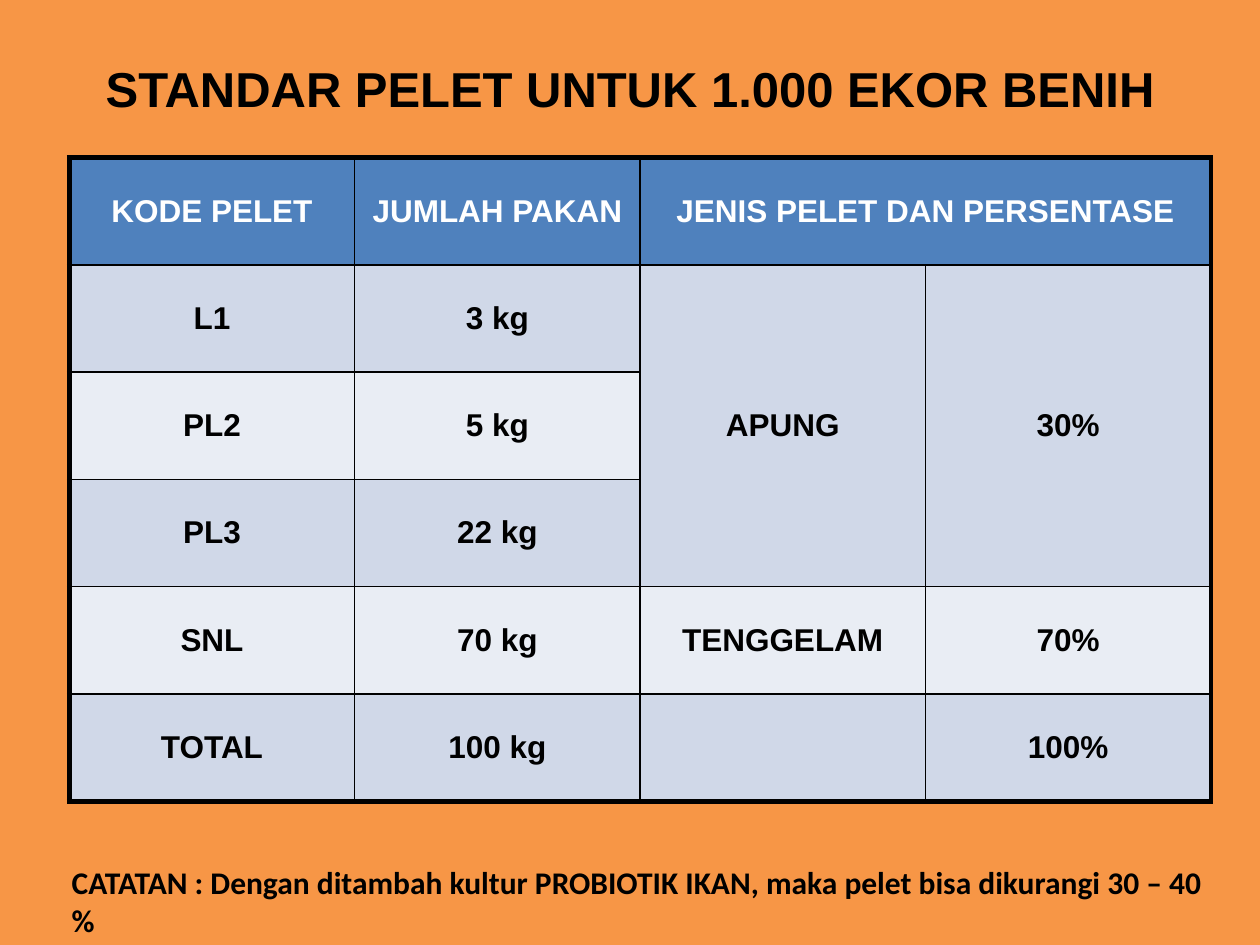
from lxml.etree import SubElement
from pptx import Presentation
from pptx.dml.color import RGBColor
from pptx.enum.text import MSO_ANCHOR, MSO_AUTO_SIZE, PP_ALIGN
from pptx.oxml.ns import qn
from pptx.util import Inches, Pt

TITLE = "STANDAR PELET UNTUK 1.000 EKOR BENIH"
NOTE = "CATATAN : Dengan ditambah kultur PROBIOTIK IKAN, maka pelet bisa dikurangi 30 – 40 %"
ROWS = [
    ["KODE PELET", "JUMLAH PAKAN", "JENIS PELET DAN PERSENTASE", ""],
    ["L1", "3 kg", "APUNG", "30%"],
    ["PL2", "5 kg", "", ""],
    ["PL3", "22 kg", "", ""],
    ["SNL", "70 kg", "TENGGELAM", "70%"],
    ["TOTAL", "100 kg", "", "100%"],
]
MERGES = [((0, 2), (0, 3)), ((1, 2), (3, 2)), ((1, 3), (3, 3))]
COLORS = {
    "background": "F79646",
    "header": "4F81BD",
    "odd": "D0D8E8",
    "even": "E9EDF4",
    "ink": "000000",
    "white": "FFFFFF",
}
OUTER, INNER = 3, 1


def rgb(name):
    return RGBColor.from_string(COLORS[name])


def write(tf, text, size, font, color, align):
    p = tf.paragraphs[0]
    p.text = text
    p.alignment = align
    p.font.size = Pt(size)
    p.font.name = font
    p.font.bold = True
    p.font.color.rgb = rgb(color)


def set_borders(cell, widths):
    tc_pr = cell._tc.get_or_add_tcPr()
    for side, width in widths.items():
        ln = SubElement(tc_pr, qn(f"a:ln{side}"), w=str(Pt(width)))
        fill = SubElement(ln, qn("a:solidFill"))
        SubElement(fill, qn("a:srgbClr"), val=COLORS["ink"])


def add_feed_table(s):
    n_rows, n_cols = len(ROWS), len(ROWS[0])
    frame = s.shapes.add_table(
        n_rows, n_cols, Inches(0.55), Inches(1.25), Inches(9.06), Inches(5.11))
    table = frame.table
    for first, last in MERGES:
        table.cell(*first).merge(table.cell(*last))
    for r, row in enumerate(ROWS):
        band = "header" if r == 0 else "odd" if r % 2 else "even"
        for c, text in enumerate(row):
            cell = table.cell(r, c)
            right, bottom = c + cell.span_width, r + cell.span_height
            set_borders(cell, {
                "L": OUTER if c == 0 else INNER,
                "R": OUTER if right == n_cols else INNER,
                "T": OUTER if r == 0 else INNER,
                "B": OUTER if bottom == n_rows else INNER,
            })
            cell.fill.solid()
            cell.fill.fore_color.rgb = rgb(band)
            cell.vertical_anchor = MSO_ANCHOR.MIDDLE
            write(cell.text_frame, text, 18, "Arial",
                  "ink" if r else "white", PP_ALIGN.CENTER)


def main():
    prs = Presentation()
    prs.slide_width, prs.slide_height = Inches(10), Inches(7.5)
    s = prs.slides.add_slide(prs.slide_layouts[5])
    s.background.fill.solid()
    s.background.fill.fore_color.rgb = rgb("background")

    title = s.shapes.title
    title.left, title.top = Inches(0.5), Inches(0.3)
    title.width, title.height = Inches(9), Inches(0.79)
    title.text_frame.vertical_anchor = MSO_ANCHOR.MIDDLE
    write(title.text_frame, TITLE, 28, "Arial", "ink", PP_ALIGN.CENTER)

    add_feed_table(s)

    note = s.shapes.add_textbox(Inches(0.47), Inches(6.8), Inches(9.39), Inches(0.4))
    note.text_frame.word_wrap = False
    note.text_frame.auto_size = MSO_AUTO_SIZE.SHAPE_TO_FIT_TEXT
    write(note.text_frame, NOTE, 18, "Calibri", "ink", PP_ALIGN.LEFT)

    prs.save("out.pptx")


if __name__ == "__main__":
    main()
